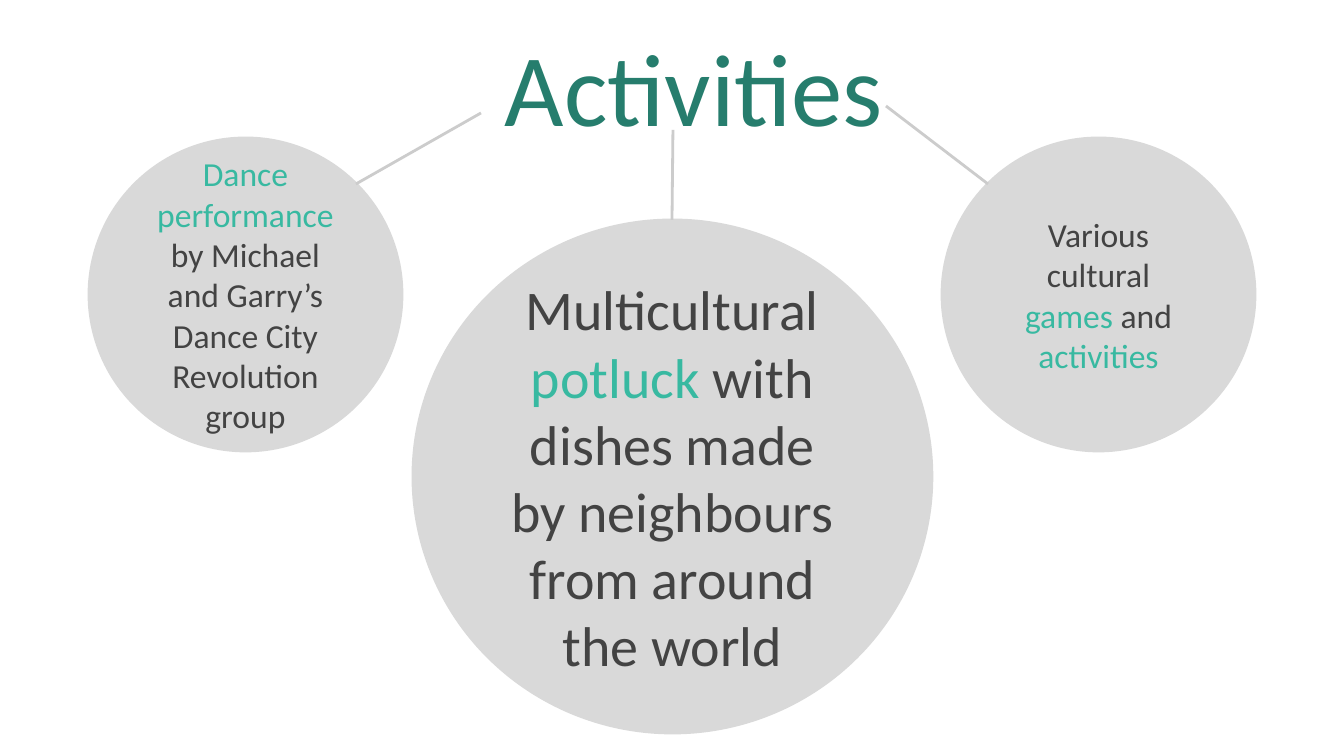
from pptx import Presentation
from pptx.dml.color import RGBColor
from pptx.enum.shapes import MSO_CONNECTOR as CONN, MSO_SHAPE as SHAPE
from pptx.enum.text import MSO_ANCHOR as ANCHOR, PP_ALIGN as ALIGN
from pptx.oxml.ns import qn
from pptx.util import Inches, Pt
from lxml.etree import SubElement

COLORS = {"title": "267D6D", "accent": "38B9A1", "text": "434343",
          "circle": "D9D9D9", "line": "CCCCCC"}
FONT = "Calibri"

# Content: text runs are (text, colour name)
TITLE = [("Activities", "title")]
MAIN = [("Multicultural ", "text"), ("potluck", "accent"),
        (" with dishes made by neighbours from around the world", "text")]
GAMES = [("Various cultural ", "text"), ("games", "accent"),
         (" and ", "text"), ("activities", "accent")]
DANCE = [("Dance performance", "accent"),
         (" by Michael and Garry’s Dance City Revolution group", "text")]

# Layout in px: the circles are symmetric about the middle of the slide
WIDTH, HEIGHT = 1344, 756
MID = WIDTH // 2
SMALL, MARGIN, SIDE_TOP = 313, 89, 138
MAIN_W, MAIN_H, MAIN_TOP = 519, 513, 220
SPOKE_X, SPOKE_Y = 316, 184  # outer ends: distance from the middle, height

CIRCLES = [  # runs, box, text size
    (MAIN, (MID - MAIN_W // 2, MAIN_TOP, MAIN_W, MAIN_H), 30),
    (GAMES, (WIDTH - MARGIN - SMALL, SIDE_TOP, SMALL, SMALL), 18),
    (DANCE, (MARGIN, SIDE_TOP, SMALL, SMALL), 18),
]
SPOKES = [  # circle end, title end
    (MID - SPOKE_X, SPOKE_Y, 481, 113),
    (MID + SPOKE_X, SPOKE_Y, 886, 106),
    (MID, MAIN_TOP, 673, 130),
]


def px(*values):
    return [round(v * 914400 / 134.4) for v in values]


def rgb(name):
    return RGBColor.from_string(COLORS[name])


def write(sp, runs, size, anchor):
    tf = sp.text_frame
    tf.word_wrap = True
    tf.vertical_anchor = anchor
    tf.margin_left = tf.margin_right = Inches(0.1)
    tf.margin_top = tf.margin_bottom = Inches(0.1)
    p = tf.paragraphs[0]
    p.alignment = ALIGN.CENTER
    for text, color in runs:
        r = p.add_run()
        r.text = text
        r.font.name = FONT
        r.font.size = Pt(size)
        r.font.color.rgb = rgb(color)


prs = Presentation()
prs.slide_width, prs.slide_height = px(WIDTH, HEIGHT)
slide = prs.slides.add_slide(prs.slide_layouts[6])
shapes = slide.shapes

# Title
write(shapes.add_textbox(*px(89, 34, 1210, 126)), TITLE, 55, ANCHOR.BOTTOM)

# Circles
for runs, box, size in CIRCLES:
    sp = shapes.add_shape(SHAPE.OVAL, *px(*box))
    sp.shadow.inherit = False
    sp.fill.solid()
    sp.fill.fore_color.rgb = sp.line.color.rgb = rgb("circle")
    sp.line.width = Pt(1.5)
    write(sp, runs, size, ANCHOR.MIDDLE)

# Lines from the circles to the title
for ends in SPOKES:
    line = shapes.add_connector(CONN.STRAIGHT, *px(*ends))
    line.line.color.rgb = rgb("line")
    line.line.width = Pt(1.5)
    SubElement(line._element.spPr, qn("a:effectLst"))

prs.save("out.pptx")
